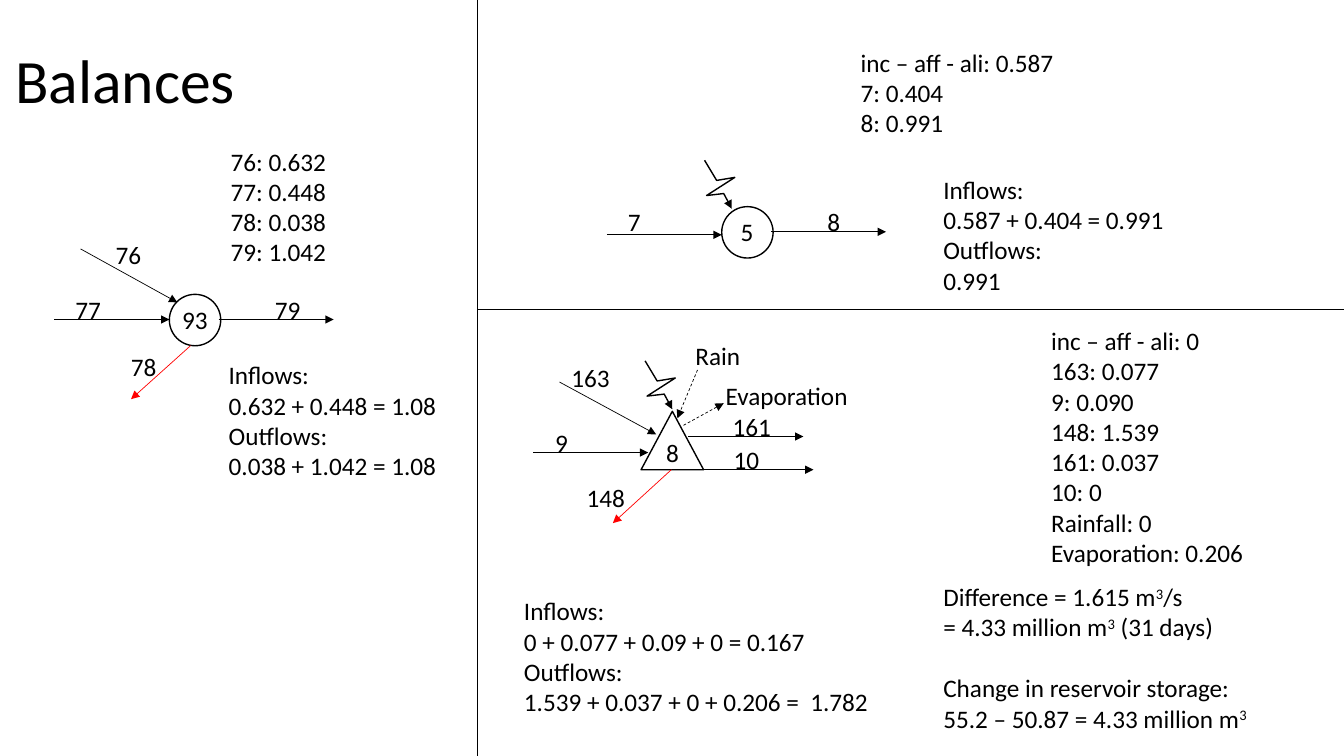
from lxml.etree import SubElement
from pptx import Presentation
from pptx.dml.color import RGBColor
from pptx.enum.dml import MSO_LINE
from pptx.enum.shapes import MSO_CONNECTOR, MSO_SHAPE
from pptx.enum.text import MSO_ANCHOR, MSO_AUTO_SIZE, PP_ALIGN
from pptx.oxml.ns import qn
from pptx.util import Inches, Pt

COLORS = {"ink": "000000", "withdrawal": "FF0000"}
TITLE_FONT = {"name": "Calibri", "size": Pt(44)}
BODY_FONT = {"name": "Calibri", "size": Pt(18)}
BOX_FORMAT = {"word_wrap": False, "auto_size": MSO_AUTO_SIZE.SHAPE_TO_FIT_TEXT}

# All positions are columns and rows of a grid of square cells.
CELL = Inches(0.1)
COLUMNS, ROWS = 133.33, 75
LINE_ROWS, PADDING_ROWS = 3.03, 1
DIVIDER_COLUMN, DIVIDER_ROW = 47.4, 30.7


def cells(*counts):
    return [round(count * CELL) for count in counts]


def style_line(shape, color, width, dashed=False, arrow=True):
    shape.line.color.rgb = RGBColor.from_string(COLORS[color])
    shape.line.width = Pt(width)
    if dashed:
        shape.line.dash_style = MSO_LINE.DASH
    if arrow:
        SubElement(shape.line._get_or_add_ln(), qn("a:tailEnd"), type="triangle")


presentation = Presentation()
presentation.slide_width, presentation.slide_height = cells(COLUMNS, ROWS)
slide = presentation.slides.add_slide(presentation.slide_layouts[5])
shapes = slide.shapes

# Title
title = shapes.title
title.left, title.top, title.width, title.height = cells(0.5, 1, 115, 14.5)
title.text_frame.vertical_anchor = MSO_ANCHOR.MIDDLE
heading = title.text_frame.paragraphs[0]
heading.alignment = PP_ALIGN.LEFT
heading.line_spacing = 0.9
heading_run = heading.add_run()
heading_run.text = "Balances"
heading_run.font.color.rgb = RGBColor.from_string(COLORS["ink"])
for attribute, value in TITLE_FONT.items():
    setattr(heading_run.font, attribute, value)

# Nodes of the network: two junctions and a reservoir
NODES = [
    (MSO_SHAPE.OVAL, 16.8, 29.2, 5.1, 5.1),
    (MSO_SHAPE.OVAL, 71.6, 20.5, 5.1, 5.1),
    (MSO_SHAPE.ISOSCELES_TRIANGLE, 63.6, 40.8, 6.2, 5.8),
]
for preset, *place in NODES:
    node = shapes.add_shape(preset, *cells(*place))
    node.shadow.inherit = False
    node.fill.background()
    style_line(node, "ink", 1, arrow=False)

# Jagged arrows for the incremental inflow
JAGS = [(1.2, 2), (3, 1.7), (0.2, 3.5), (1.9, 3.3), (2.7, 4.8)]
for column, row in [(69.9, 15.9), (64, 35.8)]:
    builder = shapes.build_freeform(*cells(column, row))
    builder.add_line_segments(
        [cells(column + right, row + down) for right, down in JAGS], close=False
    )
    increment = builder.convert_to_shape()
    increment.shadow.inherit = False
    increment.fill.background()
    style_line(increment, "ink", 1)

# Flows (from, to) and the two dividers
ink_arrow = {"color": "ink"}
withdrawal_arrow = {"color": "withdrawal"}
weather_arrow = {"color": "ink", "dashed": True}
divider = {"color": "ink", "arrow": False}
FLOWS = [
    (5.4, 31.7, 16.8, 31.7, ink_arrow),
    (8, 24.7, 17.6, 30, ink_arrow),
    (18.9, 34.3, 13, 39.6, withdrawal_arrow),
    (21.7, 31.7, 33.1, 31.7, ink_arrow),
    (60.2, 23.3, 71.6, 23.3, ink_arrow),
    (76.5, 23, 87.9, 23, ink_arrow),
    (52.9, 44.9, 64.3, 44.9, ink_arrow),
    (55.5, 37.9, 65.1, 43.1, ink_arrow),
    (68.3, 43.3, 79.7, 43.3, ink_arrow),
    (69.2, 46.6, 80.7, 46.6, ink_arrow),
    (66.6, 46.6, 60.8, 51.9, withdrawal_arrow),
    (67.8, 42.2, 71.8, 40, weather_arrow),
    (69.2, 36.7, 67.2, 41.5, weather_arrow),
    (DIVIDER_COLUMN, DIVIDER_ROW, COLUMNS, DIVIDER_ROW, divider),
    (DIVIDER_COLUMN, 0, DIVIDER_COLUMN, ROWS, divider),
]
for *ends, look in FLOWS:
    flow = shapes.add_connector(MSO_CONNECTOR.STRAIGHT, *cells(*ends))
    style_line(flow, width=0.5, **look)
    SubElement(flow._element.spPr, qn("a:effectLst"))

# Texts: column, row, width in columns, lines; ^ encloses a superscript
TEXTS = [
    (17.1, 29.7, 4.6, ["93"]),
    (10.5, 23.3, 4.6, ["76"]),
    (6.5, 28.7, 4.6, ["77"]),
    (12, 34.4, 4.6, ["78"]),
    (26.3, 28.7, 4.6, ["79"]),
    (21.9, 14, 11.6, ["76: 0.632", "77: 0.448", "78: 0.038", "79: 1.042"]),
    (21.7, 35.2, 23.4,
     ["Inflows:", "0.632 + 0.448 = 1.08", "Outflows:", "0.038 + 1.042 = 1.08"]),
    (72.5, 21, 3.3, ["5"]),
    (61.3, 20, 3.3, ["7"]),
    (81.1, 20, 3.3, ["8"]),
    (84.4, 4.2, 21.4, ["inc – aff - ali: 0.587", "7: 0.404", "8: 0.991"]),
    (92.6, 16.8, 24.1,
     ["Inflows:", "0.587 + 0.404 = 0.991", "Outflows:", "0.991"]),
    (65.1, 42.9, 3.3, ["8"]),
    (55.7, 35.5, 5.9, ["163"]),
    (54.1, 41.9, 3.3, ["9"]),
    (57.2, 47.4, 5.9, ["148"]),
    (71.7, 40.3, 5.9, ["161"]),
    (71.8, 43.6, 4.6, ["10"]),
    (68, 33.3, 6.5, ["Rain"]),
    (71, 37.2, 14.3, ["Evaporation"]),
    (103.3, 31.8, 21.3,
     ["inc – aff - ali: 0", "163: 0.077", "9: 0.090", "148: 1.539",
      "161: 0.037", "10: 0", "Rainfall: 0", "Evaporation: 0.206"]),
    (51, 58.6, 36.6,
     ["Inflows:", "0 + 0.077 + 0.09 + 0 = 0.167", "Outflows:",
      "1.539 + 0.037 + 0 + 0.206 =  1.782"]),
    (92.6, 57.2, 32.6,
     ["Difference = 1.615 m^3^/s", "= 4.33 million m^3^ (31 days)",
      "Change in reservoir storage:", "55.2 – 50.87 = 4.33 million m^3^"]),
]
for column, row, width, lines in TEXTS:
    height = PADDING_ROWS + LINE_ROWS * len(lines)
    frame = shapes.add_textbox(*cells(column, row, width, height)).text_frame
    for attribute, value in BOX_FORMAT.items():
        setattr(frame, attribute, value)
    for index, line in enumerate(lines):
        paragraph = frame.paragraphs[0] if index == 0 else frame.add_paragraph()
        if line.startswith("Change"):
            paragraph.space_before = Pt(22)
        for position, piece in enumerate(line.split("^")):
            if not piece:
                continue
            run = paragraph.add_run()
            run.text = piece
            run.font.color.rgb = RGBColor.from_string(COLORS["ink"])
            for attribute, value in BODY_FONT.items():
                setattr(run.font, attribute, value)
            if position % 2:
                run._r.get_or_add_rPr().set("baseline", "30000")

presentation.save("out.pptx")
